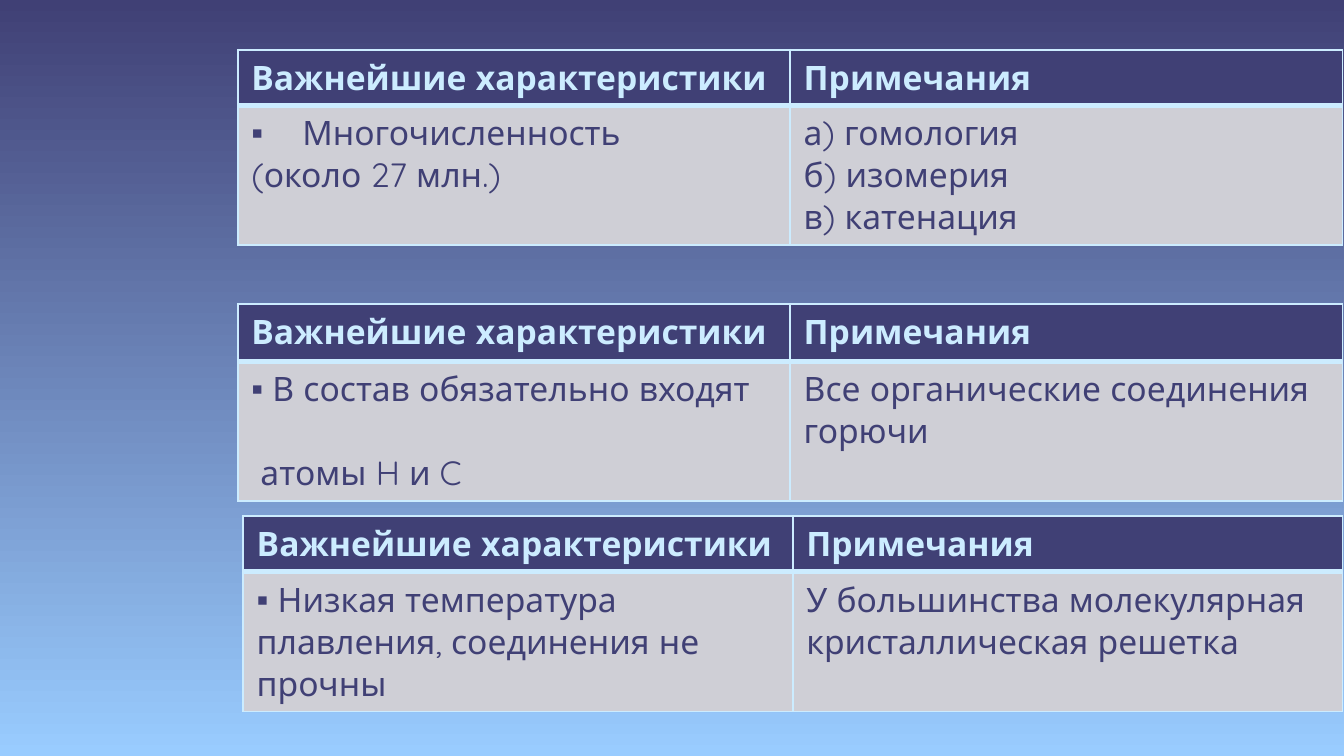
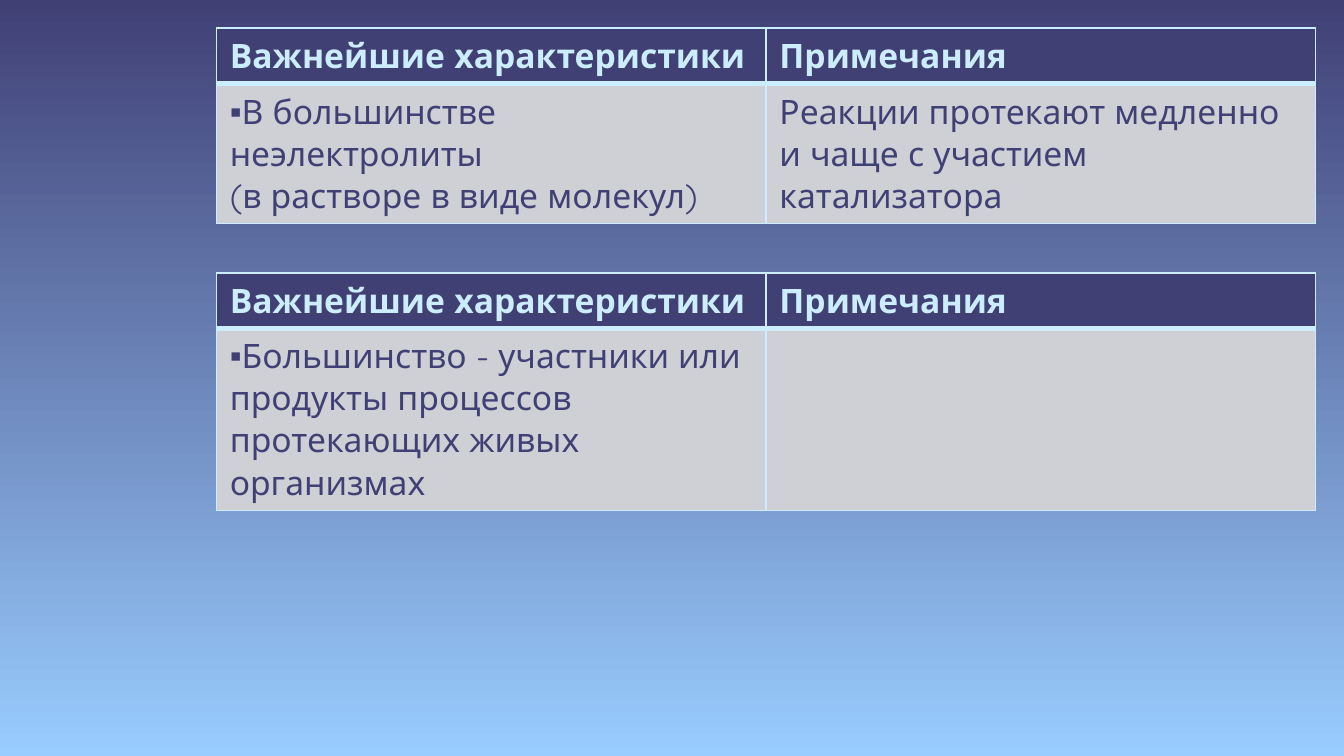
from lxml import etree
from pptx import Presentation, util as u
from pptx.dml.color import RGBColor
from pptx.oxml.ns import qn

WIDE = 10
HIGH = WIDE * 9 / 16
FONT, SIZE = "Quicksand", 18
COLOR = {"dark": "404075", "sky": "99CCFF", "ice": "CCECFF", "cell": "CFCFD6"}
HEAD = ["Важнейшие характеристики"], ["Примечания"]
THIN, THICK = 1, 3
MARK, MARK_FONT = "▪", "Arial"
HANG = 0.38
LINE = 22.5  # points, one line of cell text

# Each table: place (left, top, column width), row heights, the two body cells
# and, where needed, a hanging indent or a gap before later lines.
SLIDES = [
    [
        dict(at=(1.77, 0.37, 4.11), rows=(0.41, 1.01), hang=HANG, body=(
            ["Многочисленность", "(около 27 млн.)"],
            ["а) гомология", "б) изомерия", "в) катенация"])),
        dict(at=(1.77, 2.26, 4.11), rows=(0.43, 0.75), gap=LINE, body=(
            [" В состав обязательно входят", " атомы H и C"],
            ["Все органические соединения горючи"])),
        dict(at=(1.81, 3.84, 4.09), rows=(0.41, 1), body=(
            [" Низкая температура плавления, соединения не прочны"],
            ["У большинства молекулярная кристаллическая решетка"])),
    ],
    [
        dict(at=(1.61, 0.21, 4.09), rows=(0.41, 1), body=(
            ["В большинстве неэлектролиты", "(в растворе в виде молекул)"],
            ["Реакции протекают медленно и чаще с участием катализатора"])),
        dict(at=(1.61, 2.03, 4.09), rows=(0.41, 1.3), body=(
            ["Большинство - участники или продукты процессов "
             "протекающих живых организмах"],
            [])),
    ],
]


def rgb(name):
    return RGBColor.from_string(COLOR[name])


def paint(slide):
    """Fill the slide with the gradient, dark at the top."""
    fill = slide.background.fill
    fill.gradient()
    fill.gradient_angle = 270
    for stop, name, pos in zip(fill.gradient_stops, ("dark", "sky"), (0, 1)):
        stop.color.rgb = rgb(name)
        stop.position = pos


def edge(cell, side, width):
    line = etree.SubElement(cell._tc.get_or_add_tcPr(), qn("a:ln" + side),
                            w=str(u.Pt(width)))
    fill = etree.SubElement(line, qn("a:solidFill"))
    etree.SubElement(fill, qn("a:srgbClr"), val=COLOR["ice"])


def write(cell, lines, head, bullet, hang, gap):
    frame = cell.text_frame
    for i, line in enumerate(lines):
        para = frame.add_paragraph() if i else frame.paragraphs[0]
        para.text = line
        if i and gap:
            para.space_before = u.Pt(gap)
        if bullet:
            props = para._p.get_or_add_pPr()
            props.set("marL", str(u.Inches(hang)))
            props.set("indent", str(-u.Inches(hang)))
            if i == 0:
                etree.SubElement(props, qn("a:buFont"), typeface=MARK_FONT)
                etree.SubElement(props, qn("a:buChar"), char=MARK)
        font = para.font
        font.name, font.size, font.bold = FONT, u.Pt(SIZE), head
        font.color.rgb = rgb("ice" if head else "dark")


def grid(slide, at, rows, body, hang=0, gap=0):
    left, top, col = at
    box = [u.Inches(v) for v in (left, top, 2 * col, sum(rows))]
    table = slide.shapes.add_table(2, 2, *box).table
    table.horz_banding = False
    for c in range(2):
        table.columns[c].width = u.Inches(col)
    for r, texts in enumerate((HEAD, body)):
        head = r == 0
        table.rows[r].height = u.Inches(rows[r])
        for c, lines in enumerate(texts):
            cell = table.cell(r, c)
            for side in "LRTB":
                inner = side == ("B" if head else "T")
                edge(cell, side, THICK if inner else THIN)
            cell.fill.solid()
            cell.fill.fore_color.rgb = rgb("dark" if head else "cell")
            left_col = c == 0
            write(cell, lines, head, left_col and not head, hang,
                  gap if left_col else 0)


def main():
    deck = Presentation()
    deck.slide_width, deck.slide_height = u.Inches(WIDE), u.Inches(HIGH)
    for tables in SLIDES:
        slide = deck.slides.add_slide(deck.slide_layouts[6])
        paint(slide)
        for item in tables:
            grid(slide, **item)
    deck.save("out.pptx")


if __name__ == "__main__":
    main()
